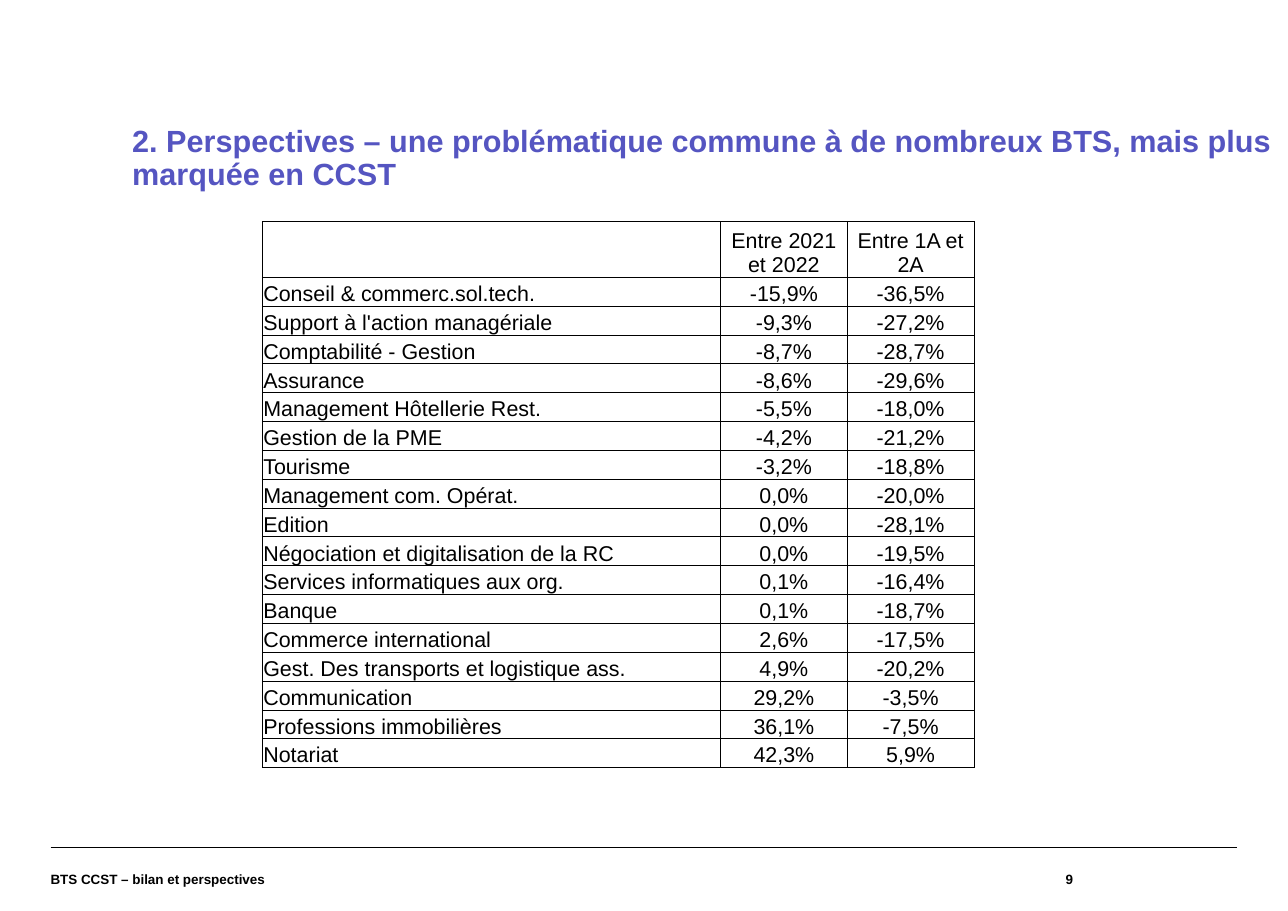
from lxml import etree
from pptx import Presentation
from pptx import util as u
from pptx.dml.color import RGBColor
from pptx.enum import shapes, text
from pptx.oxml.ns import qn

WIDTH, HEIGHT = u.Inches(11.69), u.Inches(8.27)
BLACK, VIOLET = "000000", "5555C1"
LEFT, CENTER, RIGHT = text.PP_ALIGN.LEFT, text.PP_ALIGN.CENTER, text.PP_ALIGN.RIGHT
MARGIN, FOOTER_TOP = 3.93, 92.99
COLUMN_SHARES = [35.59, 9.84, 9.84]
HEADER_SHARE, ROW_SHARE = 6.14, 3.17

TRENDS = [
    ("", "Entre 2021 et 2022", "Entre 1A et 2A"),
    ("Conseil & commerc.sol.tech.", "-15,9%", "-36,5%"),
    ("Support à l'action managériale", "-9,3%", "-27,2%"),
    ("Comptabilité - Gestion", "-8,7%", "-28,7%"),
    ("Assurance", "-8,6%", "-29,6%"),
    ("Management Hôtellerie Rest.", "-5,5%", "-18,0%"),
    ("Gestion de la PME", "-4,2%", "-21,2%"),
    ("Tourisme", "-3,2%", "-18,8%"),
    ("Management com. Opérat.", "0,0%", "-20,0%"),
    ("Edition", "0,0%", "-28,1%"),
    ("Négociation et digitalisation de la RC", "0,0%", "-19,5%"),
    ("Services informatiques aux org.", "0,1%", "-16,4%"),
    ("Banque", "0,1%", "-18,7%"),
    ("Commerce international", "2,6%", "-17,5%"),
    ("Gest. Des transports et logistique ass.", "4,9%", "-20,2%"),
    ("Communication", "29,2%", "-3,5%"),
    ("Professions immobilières", "36,1%", "-7,5%"),
    ("Notariat", "42,3%", "5,9%"),
]


def across(percent):
    return round(WIDTH * percent / 100)


def down(percent):
    return round(HEIGHT * percent / 100)


def color(code):
    return RGBColor.from_string(code)


def style(paragraph, size, code=BLACK, bold=False, align=LEFT):
    paragraph.alignment = align
    font = paragraph.font
    font.name, font.size, font.bold = "Arial", u.Pt(size), bold
    font.color.rgb = color(code)


def add_label(slide, wording, left, top, width, height, anchor, **look):
    label = slide.shapes.add_textbox(across(left), down(top), across(width), down(height))
    frame = label.text_frame
    frame.word_wrap = True
    frame.vertical_anchor = anchor
    frame.margin_left = frame.margin_right = frame.margin_top = frame.margin_bottom = 0
    frame.text = wording
    paragraph = frame.paragraphs[0]
    style(paragraph, **look)
    return paragraph


def add_title(slide):
    title = add_label(
        slide,
        "2. Perspectives – une problématique commune à de nombreux BTS, mais plus marquée en CCST",
        10.27, 13.78, 92.13, 14.03, text.MSO_ANCHOR.TOP, size=20, code=VIOLET, bold=True)
    title.line_spacing = 0.9


def add_footer(slide):
    rule = slide.shapes.add_connector(
        shapes.MSO_CONNECTOR.STRAIGHT,
        across(MARGIN), down(FOOTER_TOP), across(100 - MARGIN), down(FOOTER_TOP))
    rule.line.color.rgb = color(BLACK)
    rule.line.width = u.Pt(0.8)
    etree.SubElement(rule._element.spPr, qn("a:effectLst"))
    for wording, left, width, align in [
        ("BTS CCST – bilan et perspectives", MARGIN, 64.59, LEFT),
        ("9", 68.52, 14.8, RIGHT),
    ]:
        add_label(slide, wording, left, FOOTER_TOP, width, 100 - FOOTER_TOP,
                  text.MSO_ANCHOR.MIDDLE, size=8.8, bold=True, align=align)


def add_borders(cell):
    properties = cell._tc.get_or_add_tcPr()
    for side in ("a:lnL", "a:lnR", "a:lnT", "a:lnB"):
        border = etree.SubElement(properties, qn(side), w=str(u.Pt(0.5)))
        fill = etree.SubElement(border, qn("a:solidFill"))
        etree.SubElement(fill, qn("a:srgbClr"), val=BLACK)


def fill_cell(cell, wording, align):
    add_borders(cell)
    cell.fill.background()
    cell.vertical_anchor = text.MSO_ANCHOR.BOTTOM
    cell.margin_left = cell.margin_right = cell.margin_top = u.Inches(0.01)
    cell.margin_bottom = 0
    cell.text = wording
    style(cell.text_frame.paragraphs[0], 14, align=align)


def add_trends(slide):
    row_shares = [HEADER_SHARE] + [ROW_SHARE] * (len(TRENDS) - 1)
    table = slide.shapes.add_table(
        len(TRENDS), len(COLUMN_SHARES), across(20.36), down(24.3),
        across(sum(COLUMN_SHARES)), down(sum(row_shares))).table
    table.first_row = table.horz_banding = False
    for column, share in zip(table.columns, COLUMN_SHARES):
        column.width = across(share)
    for row, share, wordings in zip(table.rows, row_shares, TRENDS):
        row.height = down(share)
        for cell, wording, align in zip(row.cells, wordings, (LEFT, CENTER, CENTER)):
            fill_cell(cell, wording, align)


def main():
    deck = Presentation()
    deck.slide_width, deck.slide_height = WIDTH, HEIGHT
    slide = deck.slides.add_slide(deck.slide_layouts[6])
    add_footer(slide)
    add_title(slide)
    add_trends(slide)
    deck.save("out.pptx")


if __name__ == "__main__":
    main()
